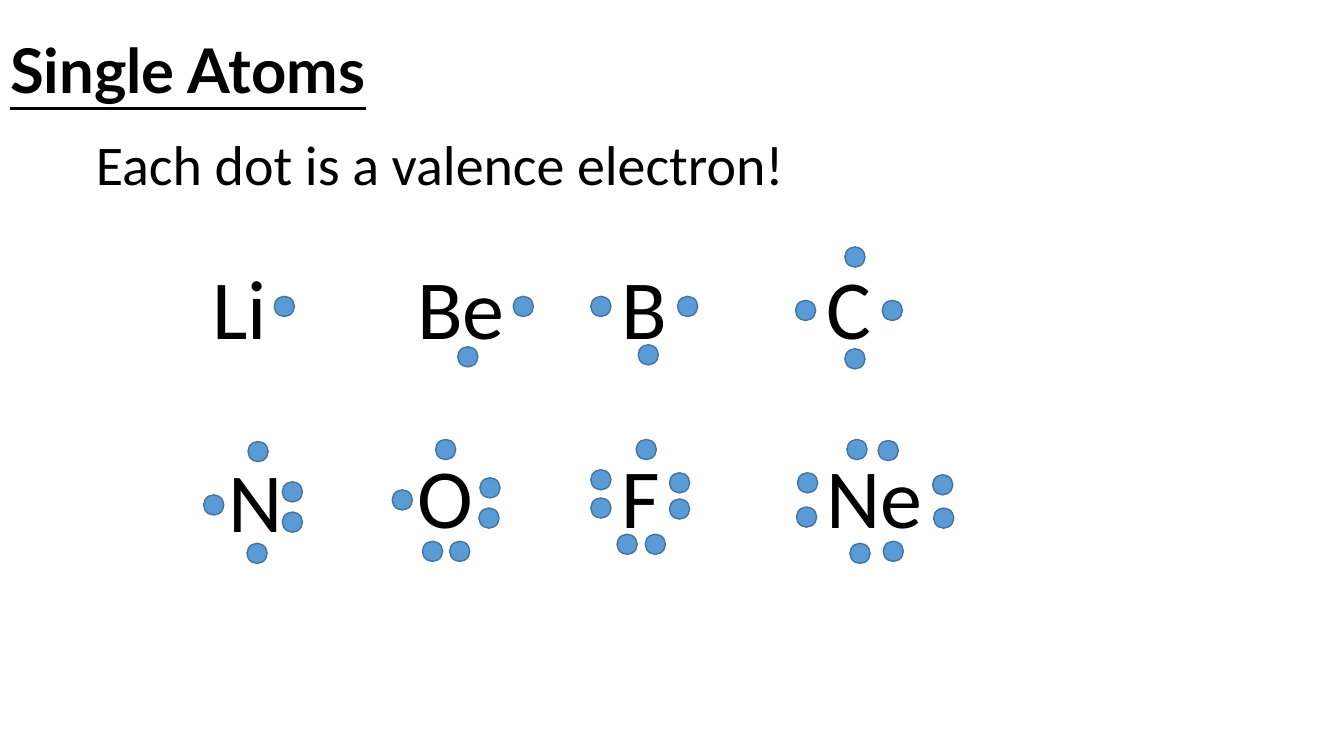
import pptx
import pptx.util
import pptx.dml.color
import pptx.enum.shapes
import pptx.enum.text
from dataclasses import dataclass

Inches = pptx.util.Inches
Pt = pptx.util.Pt
RGB = pptx.dml.color.RGBColor


@dataclass(frozen=True)
class Theme:
    ink: RGB = RGB(0x00, 0x00, 0x00)
    dot_fill: RGB = RGB(0x5B, 0x9B, 0xD5)
    dot_line: RGB = RGB(0x43, 0x73, 0x9E)
    heading_font: str = "Lato"
    body_font: str = "Calibri"
    title_size: int = 44
    body_size: int = 40
    symbol_size: int = 60


THEME = Theme()
DOT = 0.2
CELL_WIDTH, CELL_HEIGHT = 2.03, 1.11
GRID_LEFT = 2.01
ROW_TOPS = (2.49, 4.36)

# Each atom: symbol, shift from its grid cell, dot positions within the cell
ATOM_ROWS = (
    (
        ("Li", (0, 0), [(0.71, 0.45)]),
        ("Be", (0, 0), [(1.05, 0.45), (0.5, 0.95)]),
        ("B", (0, 0), [(0.65, 0.45), (0.26, 0.93), (-0.21, 0.45)]),
        ("C", (0, 0), [(0.28, -0.04), (0.65, 0.49), (0.28, 0.97), (-0.21, 0.49)]),
    ),
    (
        ("N", (0.16, 0.04), [(0.29, -0.02), (0.63, 0.38), (0.63, 0.68),
                             (0.28, 0.99), (-0.15, 0.51)]),
        ("O", (0, 0), [(0.28, 0), (0.72, 0.38), (0.71, 0.68),
                       (0.42, 1.01), (0.15, 1.01), (-0.15, 0.5)]),
        ("F", (0, 0), [(0.24, 0), (0.57, 0.33), (0.57, 0.59), (0.33, 0.94),
                       (0.05, 0.94), (-0.21, 0.58), (-0.21, 0.3)]),
        ("Ne", (0, 0), [(0.3, 0), (0.61, 0.01), (1.15, 0.35), (1.16, 0.68),
                        (0.66, 1.01), (0.33, 1.03), (-0.2, 0.67), (-0.19, 0.33)]),
    ),
)


def write_line(frame, text, size, font_name, anchor):
    """Put one left-aligned run in a text frame and return the paragraph and run."""
    frame.word_wrap = True
    frame.vertical_anchor = anchor
    line = frame.paragraphs[0]
    line.alignment = pptx.enum.text.PP_ALIGN.LEFT
    line.space_before = Pt(0)
    run = line.add_run()
    run.text = text
    run.font.size = Pt(size)
    run.font.name = font_name
    run.font.color.rgb = THEME.ink
    return line, run


def place(part, left, top, width, height):
    part.left, part.top = Inches(left), Inches(top)
    part.width, part.height = Inches(width), Inches(height)


def fill_title(title, box):
    place(title, *box)
    line, run = write_line(title.text_frame, "Single Atoms", THEME.title_size,
                           THEME.heading_font, pptx.enum.text.MSO_ANCHOR.MIDDLE)
    line.line_spacing = 0.9
    run.font.bold = True
    run.font.underline = True


def fill_statement(statement, box):
    place(statement, *box)
    line, _ = write_line(statement.text_frame, "Each dot is a valence electron!",
                         THEME.body_size, THEME.body_font,
                         pptx.enum.text.MSO_ANCHOR.TOP)
    line.line_spacing = 0.9
    # No bullet and no hanging indent
    properties = line._p.get_or_add_pPr()
    properties.set("marL", "0")
    properties.set("indent", "0")
    properties.append(pptx.oxml.parse_xml(
        '<a:buNone xmlns:a="http://schemas.openxmlformats.org/drawingml/2006/main"/>'))


def add_electron(slide, left, top):
    electron = slide.shapes.add_shape(pptx.enum.shapes.MSO_SHAPE.OVAL, Inches(left),
                                      Inches(top), Inches(DOT), Inches(DOT))
    electron.shadow.inherit = False
    electron.fill.solid()
    electron.fill.fore_color.rgb = THEME.dot_fill
    electron.line.color.rgb = THEME.dot_line
    electron.line.width = Pt(1)


def add_atom(slide, symbol, dots, box):
    left, top, width, height = box
    label = slide.shapes.add_textbox(Inches(left), Inches(top),
                                     Inches(width), Inches(height))
    write_line(label.text_frame, symbol, THEME.symbol_size, THEME.body_font,
               pptx.enum.text.MSO_ANCHOR.TOP)
    label.text_frame.auto_size = pptx.enum.text.MSO_AUTO_SIZE.SHAPE_TO_FIT_TEXT
    for across, down in dots:
        add_electron(slide, left + across, top + down)


def main():
    deck = pptx.Presentation()
    deck.slide_width, deck.slide_height = Inches(13.33), Inches(7.5)
    slide = deck.slides.add_slide(deck.slide_layouts[1])

    # Heading and statement
    fill_title(slide.shapes.title, (0, 0, 13.33, 1.45))
    fill_statement(slide.placeholders[1], (0.85, 1.31, 11.5, 4.76))

    # Grid of atoms
    for row_top, atoms in zip(ROW_TOPS, ATOM_ROWS):
        for column, (symbol, (shift_x, shift_y), dots) in enumerate(atoms):
            left = GRID_LEFT + column * CELL_WIDTH + shift_x
            add_atom(slide, symbol, dots,
                     (left, row_top + shift_y, CELL_WIDTH, CELL_HEIGHT))

    deck.save("out.pptx")


if __name__ == "__main__":
    main()
